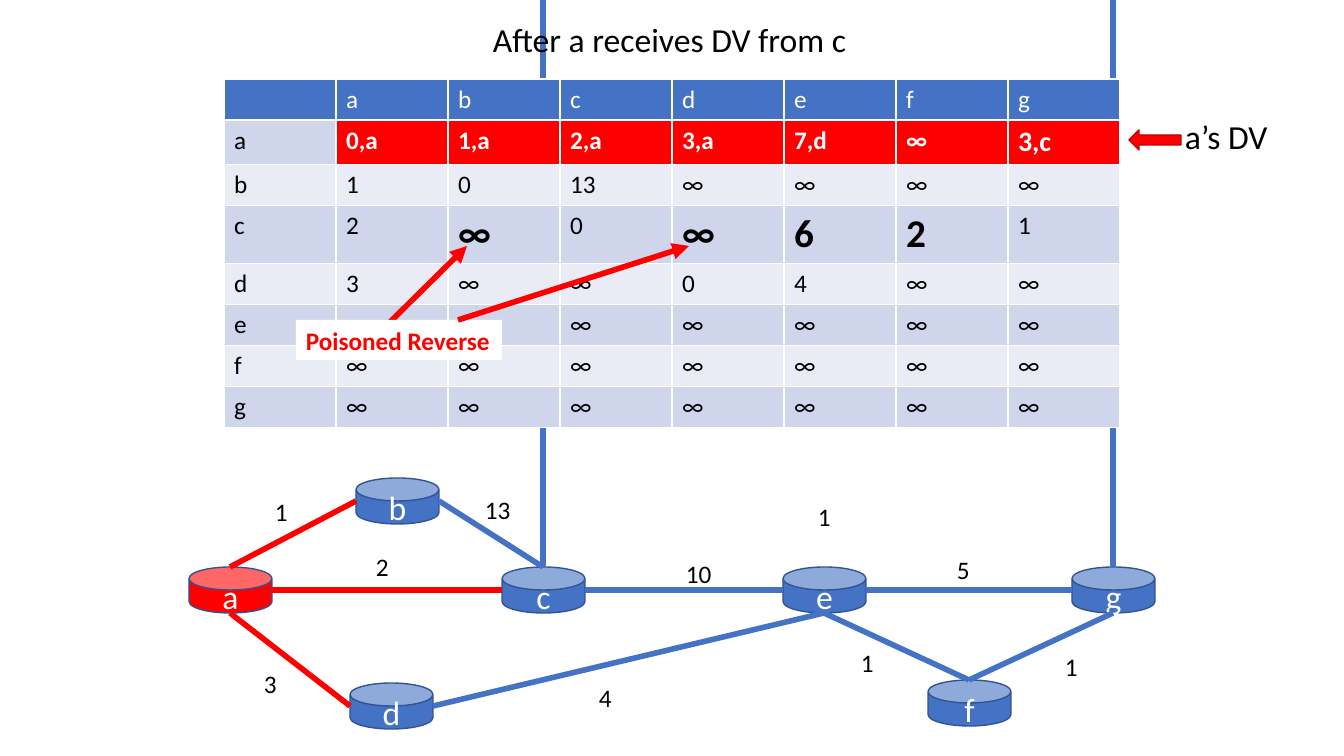
import pptx
import pptx.util
import pptx.dml.color
import pptx.enum.shapes
import pptx.enum.text
import pptx.oxml.ns
import lxml.etree

PX = 9071
RED = pptx.dml.color.RGBColor(0xFF, 0x00, 0x00)
DARK_RED = pptx.dml.color.RGBColor(0xC0, 0x00, 0x00)
BLUE = pptx.dml.color.RGBColor(0x44, 0x72, 0xC4)
DARK_BLUE = pptx.dml.color.RGBColor(0x32, 0x54, 0x91)
BAND_DARK = pptx.dml.color.RGBColor(0xCF, 0xD5, 0xEA)
BAND_LIGHT = pptx.dml.color.RGBColor(0xE9, 0xEB, 0xF5)
WHITE = pptx.dml.color.RGBColor(0xFF, 0xFF, 0xFF)
BLACK = pptx.dml.color.RGBColor(0x00, 0x00, 0x00)
SHAPE = pptx.enum.shapes.MSO_SHAPE
ALIGN = pptx.enum.text.PP_ALIGN

deck = pptx.Presentation()
deck.slide_width = 1344 * PX
deck.slide_height = 756 * PX
slide = deck.slides.add_slide(deck.slide_layouts[6])


def write(frame, words, size=18, color=BLACK, bold=False, align=ALIGN.LEFT):
    paragraph = frame.paragraphs[0]
    paragraph.alignment = align
    run = paragraph.add_run()
    run.text = words
    run.font.name = "Calibri"
    run.font.size = pptx.util.Pt(size)
    run.font.bold = bold
    run.font.color.rgb = color


def draw_line(start, end, color, arrow=False):
    line = slide.shapes.add_connector(
        pptx.enum.shapes.MSO_CONNECTOR.STRAIGHT, *(v * PX for v in (*start, *end)))
    line.line.color.rgb = color
    line.line.width = pptx.util.Pt(4)
    properties = line._element.spPr
    if arrow:
        lxml.etree.SubElement(
            line.line._ln, pptx.oxml.ns.qn("a:tailEnd"), type="triangle")
    lxml.etree.SubElement(properties, pptx.oxml.ns.qn("a:effectLst"))


ROUTER_WIDTH, ROUTER_HEIGHT = 83, 46
routers = {"a": (189, 567), "b": (356, 478), "c": (502, 567), "d": (350, 683),
           "e": (783, 567), "f": (928, 680), "g": (1072, 567)}
ports = {}
for name, (left, top) in routers.items():
    router = slide.shapes.add_shape(
        SHAPE.CAN, left * PX, top * PX, ROUTER_WIDTH * PX, ROUTER_HEIGHT * PX)
    router.shadow.inherit = False
    router.adjustments[0] = 0.5
    router.fill.solid()
    router.fill.fore_color.rgb = RED if name == "a" else BLUE
    router.line.color.rgb = DARK_BLUE
    router.line.width = pptx.util.Pt(1)
    router.text_frame.vertical_anchor = pptx.enum.text.MSO_ANCHOR.MIDDLE
    write(router.text_frame, name, size=24, color=WHITE, align=ALIGN.CENTER)
    center, middle = left + ROUTER_WIDTH // 2, top + ROUTER_HEIGHT // 2
    ports[name, "top"] = center, top
    ports[name, "left"] = left, middle
    ports[name, "bottom"] = center, top + ROUTER_HEIGHT
    ports[name, "right"] = left + ROUTER_WIDTH, middle

links = [("a", "right", "c", "left"), ("c", "right", "e", "left"),
         ("e", "right", "g", "left"), ("a", "top", "b", "left"),
         ("b", "right", "c", "top"), ("a", "bottom", "d", "left"),
         ("d", "right", "e", "bottom"), ("f", "top", "e", "bottom"),
         ("f", "top", "g", "bottom")]
for source, source_side, target, target_side in links:
    draw_line(ports[source, source_side], ports[target, target_side],
              RED if source == "a" else BLUE)
for name in "cg":
    x, y = ports[name, "top"]
    draw_line((x, y), (x, 0), BLUE)

vectors = [
    ["", "a", "b", "c", "d", "e", "f", "g"],
    ["a", "0,a", "1,a", "2,a", "3,a", "7,d", "∞", "3,c"],
    ["b", "1", "0", "13", "∞", "∞", "∞", "∞"],
    ["c", "2", "∞", "0", "∞", "6", "2", "1"],
    ["d", "3", "∞", "∞", "0", "4", "∞", "∞"],
    *([name] + ["∞"] * 7 for name in "efg"),
]
COLUMN_WIDTH, ROW_HEIGHT = 112, 41
table = slide.shapes.add_table(
    8, 8, 224 * PX, 79 * PX, 8 * COLUMN_WIDTH * PX, 8 * ROW_HEIGHT * PX).table
large_sizes = {(1, 7): 20, (3, 2): 28, (3, 4): 28, (3, 5): 28, (3, 6): 28}
for row, vector in enumerate(vectors):
    for column, entry in enumerate(vector):
        own_vector = row == 1 and column > 0
        if row == 0:
            fill = BLUE
        elif own_vector:
            fill = RED
        else:
            fill = BAND_DARK if row % 2 else BAND_LIGHT
        cell = table.cell(row, column)
        cell.fill.solid()
        cell.fill.fore_color.rgb = fill
        if entry:
            write(cell.text_frame, entry,
                  size=large_sizes.get((row, column), 18),
                  color=WHITE if row == 0 or own_vector else BLACK,
                  bold=own_vector or (row, column) in large_sizes)

captions = [
    ("1", 265, 491, 33, 18), ("2", 366, 546, 33, 18), ("3", 254, 663, 33, 18),
    ("4", 589, 677, 33, 18), ("1", 1055, 646, 33, 18), ("1", 851, 642, 33, 18),
    ("1", 808, 496, 33, 18), ("10", 676, 553, 46, 18), ("5", 947, 549, 33, 18),
    ("13", 475, 489, 46, 18), ("a’s DV", 1175, 111, 104, 24),
    ("After a receives DV from c", 483, 14, 378, 24),
]
for words, left, top, width, size in captions:
    caption = slide.shapes.add_textbox(
        left * PX, top * PX, width * PX, (50 if size == 24 else 40) * PX)
    caption.text_frame.word_wrap = False
    caption.text_frame.auto_size = pptx.enum.text.MSO_AUTO_SIZE.SHAPE_TO_FIT_TEXT
    write(caption.text_frame, words, size=size)

vector_pointer = slide.shapes.add_shape(
    SHAPE.LEFT_ARROW, 1129 * PX, 130 * PX, 52 * PX, 20 * PX)
vector_pointer.shadow.inherit = False
vector_pointer.fill.solid()
vector_pointer.fill.fore_color.rgb = RED
vector_pointer.line.color.rgb = DARK_RED
vector_pointer.line.width = pptx.util.Pt(1)

draw_line((386, 326), (467, 246), RED, arrow=True)
poisoned_reverse = slide.shapes.add_shape(
    SHAPE.RECTANGLE, 296 * PX, 320 * PX, 206 * PX, 40 * PX)
poisoned_reverse.shadow.inherit = False
poisoned_reverse.fill.solid()
poisoned_reverse.fill.fore_color.rgb = WHITE
poisoned_reverse.line.fill.background()
poisoned_reverse.text_frame.word_wrap = False
write(poisoned_reverse.text_frame, "Poisoned Reverse", color=RED, bold=True)
draw_line((458, 320), (689, 246), RED, arrow=True)

deck.save("out.pptx")
